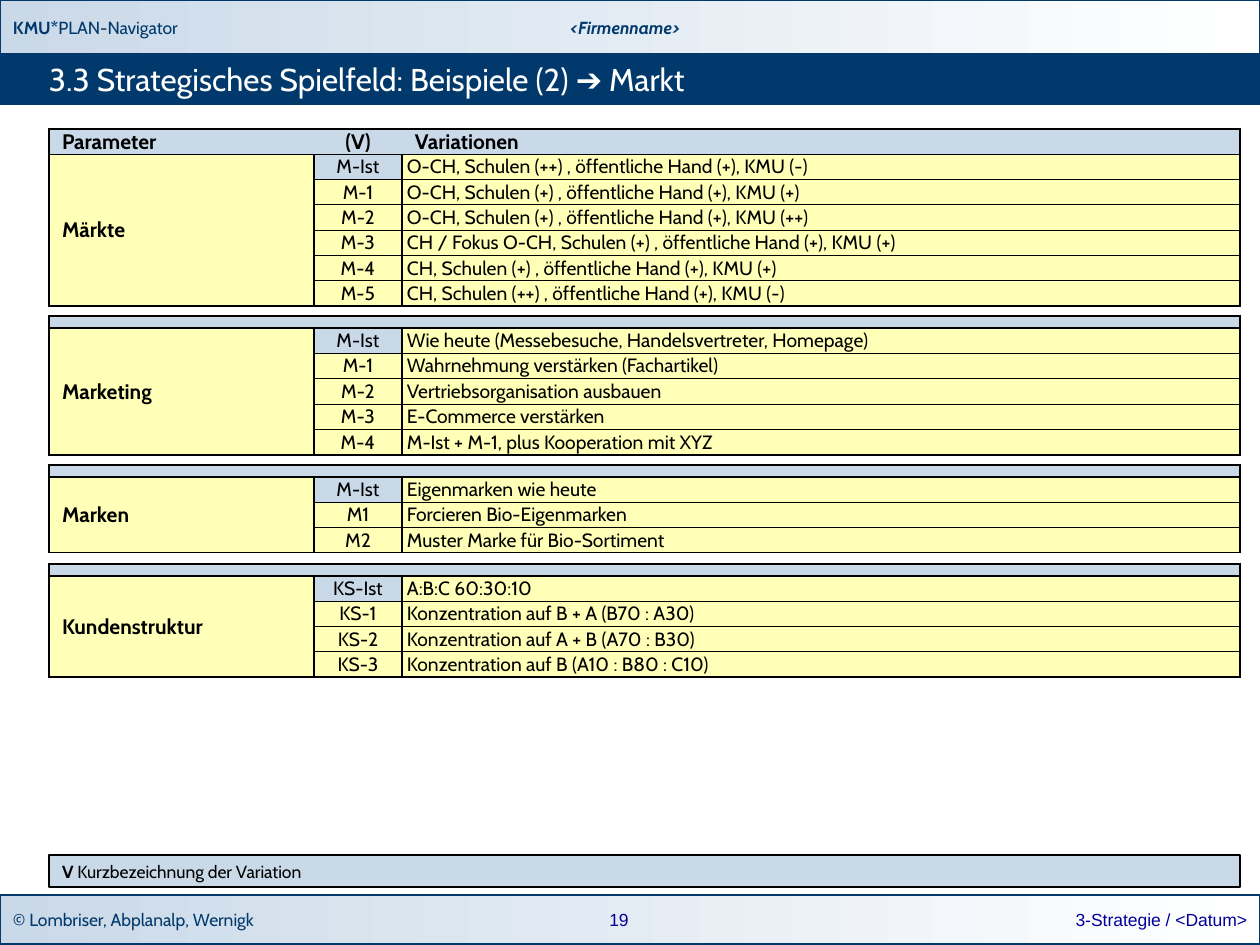
from lxml import etree
from pptx import Presentation
from pptx import util as u
from pptx.dml.color import RGBColor
from pptx.enum import shapes, text
from pptx.oxml import ns

NAVY = RGBColor(0x01, 0x39, 0x6C)
PALE_BLUE = RGBColor(0xCA, 0xD9, 0xE8)
YELLOW = RGBColor(0xFF, 0xFF, 0xB7)
LINK_BLUE = RGBColor(0x00, 0x00, 0x99)
BLACK = RGBColor(0, 0, 0)
WHITE = RGBColor(0xFF, 0xFF, 0xFF)

LEFT, CENTER, RIGHT = text.PP_ALIGN.LEFT, text.PP_ALIGN.CENTER, text.PP_ALIGN.RIGHT
COLUMNS = (265, 88, 838)
HEADINGS = ("Parameter", "(V)", "Variationen")
TABLE_LEFT = 49
WIDE, NARROW = 13, 5

PARAMETERS = [
    (129, 177, 25, HEADINGS, "Märkte", [
        ("M-Ist", "O-CH, Schulen (++) , öffentliche Hand (+), KMU (-)"),
        ("M-1", "O-CH, Schulen (+) , öffentliche Hand (+), KMU (+)"),
        ("M-2", "O-CH, Schulen (+) , öffentliche Hand (+), KMU (++)"),
        ("M-3", "CH / Fokus O-CH, Schulen (+) , öffentliche Hand (+), KMU (+)"),
        ("M-4", "CH, Schulen (+) , öffentliche Hand (+), KMU (+)"),
        ("M-5", "CH, Schulen (++) , öffentliche Hand (+), KMU (-)"),
    ]),
    (316, 139, 12, ("", "", ""), "Marketing", [
        ("M-Ist", "Wie heute (Messebesuche, Handelsvertreter, Homepage)"),
        ("M-1", "Wahrnehmung verstärken (Fachartikel)"),
        ("M-2", "Vertriebsorganisation ausbauen"),
        ("M-3", "E-Commerce verstärken"),
        ("M-4", "M-Ist + M-1, plus Kooperation mit XYZ"),
    ]),
    (465, 88, 12, ("", "", ""), "Marken", [
        ("M-Ist", "Eigenmarken wie heute"),
        ("M1", "Forcieren Bio-Eigenmarken"),
        ("M2", "Muster Marke für Bio-Sortiment"),
    ]),
    (564, 113, 12, ("", "", ""), "Kundenstruktur", [
        ("KS-Ist", "A:B:C 60:30:10"),
        ("KS-1", "Konzentration auf B + A (B70 : A30)"),
        ("KS-2", "Konzentration auf A + B (A70 : B30)"),
        ("KS-3", "Konzentration auf B (A10 : B80 : C10)"),
    ]),
]


def px(length):
    return u.Emu(round(length * 914400 / 126))


class SlideBuilder:
    """Draws styled bars, labels and parameter tables on one slide."""

    def __init__(self, slide, font="Cabin"):
        self.slide = slide
        self.font = font

    def add_runs(self, frame, runs, size, color, align=LEFT, italic=False, font=None):
        paragraph = frame.paragraphs[0]
        paragraph.alignment = align
        paragraph.font.name = font or self.font
        paragraph.font.size = u.Pt(size)
        paragraph.font.color.rgb = color
        paragraph.font.italic = italic
        if len(runs) == 1:
            paragraph.font.bold = runs[0][1]
        for content, bold in runs:
            run = paragraph.add_run()
            run.text = content
            if len(runs) > 1:
                run.font.bold = bold

    def frame(self, shape, inset_x, inset_y):
        frame = shape.text_frame
        frame.word_wrap = True
        frame.vertical_anchor = text.MSO_ANCHOR.MIDDLE
        frame.margin_left = frame.margin_right = px(inset_x)
        frame.margin_top = frame.margin_bottom = px(inset_y)
        return frame

    def bar(self, x, y, width, height, fill, line, runs=(), color=NAVY, gradient=False):
        shape = self.slide.shapes.add_shape(
            shapes.MSO_SHAPE.RECTANGLE, px(x), px(y), px(width), px(height))
        shape.shadow.inherit = False
        if gradient:
            shape.fill.gradient()
            shape.fill.gradient_angle = 0
            for stop, shade in zip(shape.fill.gradient_stops, (fill, WHITE)):
                stop.color.rgb = shade
        else:
            shape.fill.solid()
            shape.fill.fore_color.rgb = fill
        shape.line.color.rgb = line
        shape.line.width = u.Pt(0.75)
        if runs:
            self.add_runs(self.frame(shape, WIDE, NARROW), runs, 10, color)

    def label(self, x, y, width, height, content, size, color, align=LEFT,
              bold=False, italic=False, font=None, inset=WIDE):
        box = self.slide.shapes.add_textbox(px(x), px(y), px(width), px(height))
        self.add_runs(self.frame(box, inset, 0), [(content, bold)], size, color, align, italic, font)

    def cell(self, cell, content, fill, size, inset, align=LEFT, bold=False, sides="LRTB"):
        cell.margin_left = cell.margin_right = px(inset)
        cell.margin_top = cell.margin_bottom = 0
        cell.vertical_anchor = text.MSO_ANCHOR.MIDDLE
        properties = cell._tc.get_or_add_tcPr()
        for side in "LRTB":
            border = etree.SubElement(properties, ns.qn(f"a:ln{side}"), w=str(u.Pt(0.75)))
            if side in sides:
                solid = etree.SubElement(border, ns.qn("a:solidFill"))
                etree.SubElement(solid, ns.qn("a:srgbClr"), val=str(BLACK))
            else:
                etree.SubElement(border, ns.qn("a:noFill"))
        cell.fill.solid()
        cell.fill.fore_color.rgb = fill
        if content:
            self.add_runs(cell.text_frame, [(content, bold)], size, BLACK, align)
        else:
            etree.SubElement(cell.text_frame.paragraphs[0]._p, ns.qn("a:endParaRPr"), sz="400")

    def parameter_table(self, top, height, band, headings, parameter, variations):
        count = len(variations)
        table = self.slide.shapes.add_table(
            count + 1, 3, px(TABLE_LEFT), px(top), px(sum(COLUMNS)), px(height)).table
        table.first_row = table.horz_banding = False
        for column, width in zip(table.columns, COLUMNS):
            column.width = px(width)
        for row in table.rows:
            row.height = px((height - band) / count)
        table.rows[0].height = px(band)
        for index, (heading, sides) in enumerate(zip(headings, ("LTB", "TB", "RTB"))):
            self.cell(table.cell(0, index), heading, PALE_BLUE, 12, WIDE,
                      CENTER if index == 1 else LEFT, True, sides)
        for index, (code, variation) in enumerate(variations, 1):
            self.cell(table.cell(index, 0), parameter if index == 1 else "", YELLOW, 12, WIDE, bold=True)
            self.cell(table.cell(index, 1), code, PALE_BLUE if index == 1 else YELLOW, 11, NARROW, CENTER)
            self.cell(table.cell(index, 2), variation, YELLOW, 11, NARROW)
        table.cell(1, 0).merge(table.cell(count, 0))


def main():
    presentation = Presentation()
    presentation.slide_width, presentation.slide_height = px(1260), px(945)
    builder = SlideBuilder(presentation.slides.add_slide(presentation.slide_layouts[6]))

    builder.bar(0, 895, 1260, 49, PALE_BLUE, NAVY,
                [("© Lombriser, Abplanalp, Wernigk", False)], gradient=True)
    builder.bar(0, 0, 1260, 54, PALE_BLUE, NAVY,
                [("KMU*", True), ("PLAN-Navigator", False)], gradient=True)
    builder.bar(0, 54, 1260, 50, NAVY, NAVY)
    builder.label(402, 0, 446, 55, "<Firmenname>", 10, NAVY, CENTER, bold=True, italic=True)
    builder.label(861, 895, 399, 50, "3-Strategie / <Datum>", 10, LINK_BLUE, RIGHT, font="Arial")
    builder.label(589, 895, 60, 49, "19", 10, LINK_BLUE, CENTER, font="Arial")
    builder.label(49, 54, 1171, 50, "3.3 Strategisches Spielfeld: Beispiele (2) ➔ Markt", 18, WHITE, inset=0)
    for parameter in PARAMETERS:
        builder.parameter_table(*parameter)
    builder.bar(TABLE_LEFT, 855, sum(COLUMNS), 32, PALE_BLUE, BLACK,
                [("V", True), (" Kurzbezeichnung der Variation", False)], BLACK)
    presentation.save("out.pptx")


if __name__ == "__main__":
    main()
